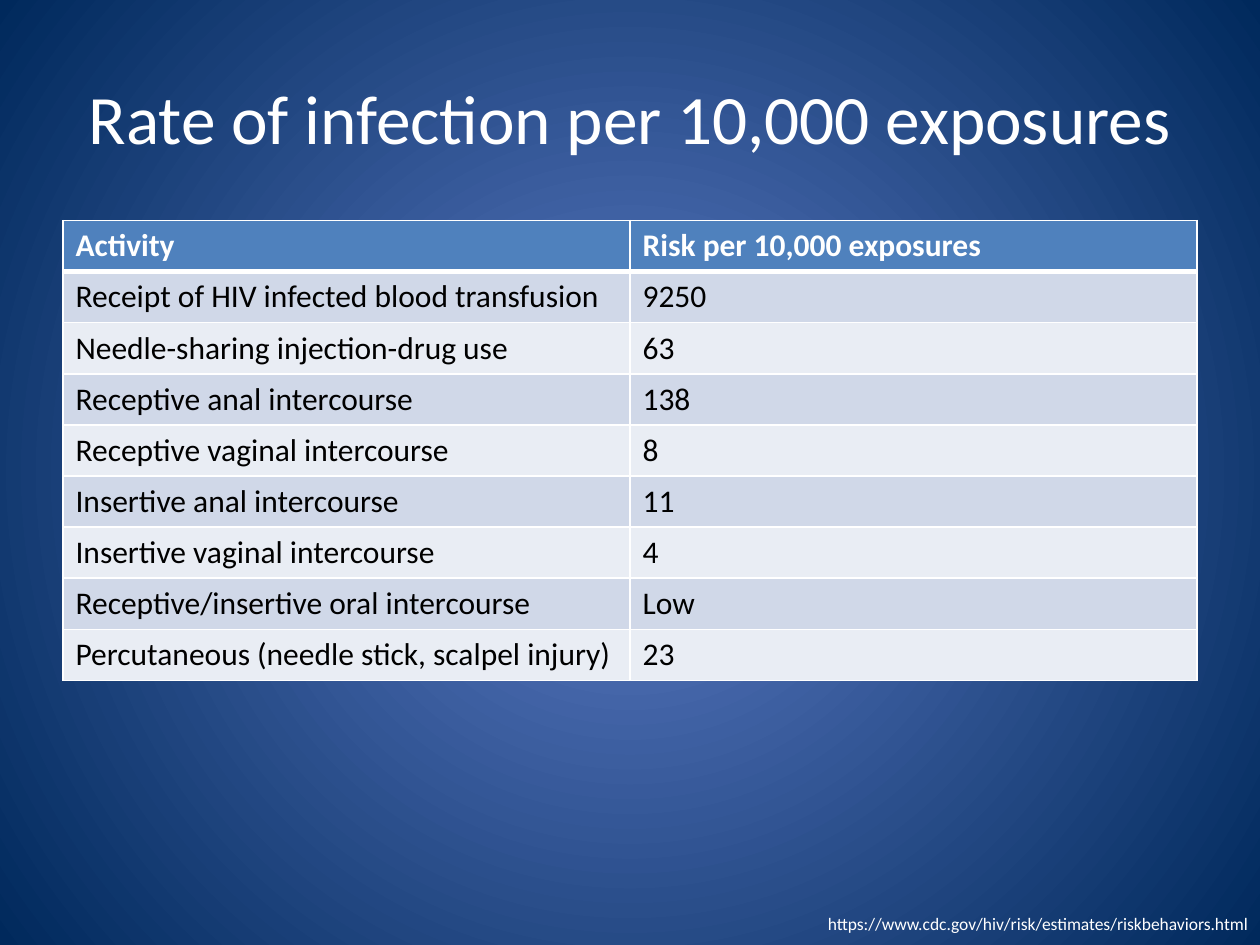
from typing import NamedTuple

import pptx
import pptx.dml.color
import pptx.enum.text
import pptx.oxml
import pptx.oxml.ns
import pptx.util
from lxml import etree

RGBColor = pptx.dml.color.RGBColor
Align = pptx.enum.text.PP_ALIGN
Anchor = pptx.enum.text.MSO_ANCHOR
qn = pptx.oxml.ns.qn

WHITE = RGBColor(0xFF, 0xFF, 0xFF)
BLACK = RGBColor(0x00, 0x00, 0x00)
GLOW = RGBColor(0x5E, 0x7C, 0xC5)
NAVY = RGBColor(0x00, 0x29, 0x5C)
HEADER = RGBColor(0x4F, 0x81, 0xBD)
BANDS = (RGBColor(0xD0, 0xD8, 0xE8), RGBColor(0xE9, 0xED, 0xF4))

WIDTH = pptx.util.Inches(10)
HEIGHT = pptx.util.Inches(7.5)
ROW_HEIGHT = pptx.util.Inches(3.65 / 9)
THIN, THICK = 1, 3


class Box(NamedTuple):
    left: float
    top: float
    width: float
    height: float

    def lengths(self) -> tuple:
        return (int(self.left * WIDTH), int(self.top * HEIGHT),
                int(self.width * WIDTH), int(self.height * HEIGHT))


class Risk(NamedTuple):
    activity: str
    rate: str


HEADINGS = Risk("Activity", "Risk per 10,000 exposures")
RISKS = (
    Risk("Receipt of HIV infected blood transfusion", "9250"),
    Risk("Needle-sharing injection-drug use", "63"),
    Risk("Receptive anal intercourse", "138"),
    Risk("Receptive vaginal intercourse", "8"),
    Risk("Insertive anal intercourse", "11"),
    Risk("Insertive vaginal intercourse", "4"),
    Risk("Receptive/insertive oral intercourse", "Low"),
    Risk("Percutaneous (needle stick, scalpel injury)", "23"),
)
TITLE_BOX = Box(0.05, 0.04, 0.9, 1 / 6)
TABLE_BOX = Box(0.05, 1.75 / 7.5, 0.9, 3.65 / 7.5)
SOURCE_BOX = Box(0.433, 0.96, 0.567, 0.036)


def write(tf, text: str, *, size: float, color=WHITE, bold=False, align=Align.LEFT) -> None:
    p = tf.paragraphs[0]
    p.alignment = align
    r = p.add_run()
    r.text = text
    r.font.name = "Calibri"
    r.font.size = pptx.util.Pt(size)
    r.font.bold = bold
    r.font.color.rgb = color


def add_text(s, box: Box, text: str, *, anchor=Anchor.TOP, **style) -> None:
    tf = s.shapes.add_textbox(*box.lengths()).text_frame
    tf.word_wrap = True
    tf.vertical_anchor = anchor
    write(tf, text, **style)


def paint_background(s) -> None:
    fill = s.background.fill
    fill.gradient()
    for stop, color, position in zip(fill.gradient_stops, (GLOW, NAVY), (0, 1)):
        stop.color.rgb = color
        stop.position = position
    lin = s.element.find(".//" + qn("a:lin"))
    circle = etree.Element(qn("a:path"), {"path": "circle"})
    etree.SubElement(circle, qn("a:fillToRect"), dict.fromkeys("ltrb", "50000"))
    lin.getparent().replace(lin, circle)


def set_borders(cell, **widths: float) -> None:
    tc_pr = cell._tc.get_or_add_tcPr()
    for side in "LRTB":
        width = pptx.util.Pt(widths.get(side, THIN))
        ln = etree.SubElement(tc_pr, qn(f"a:ln{side}"), {"w": str(width)})
        solid = etree.SubElement(ln, qn("a:solidFill"))
        etree.SubElement(solid, qn("a:srgbClr"), {"val": str(WHITE)})


def add_risk_table(s, box: Box) -> None:
    rows = (HEADINGS, *RISKS)
    table = s.shapes.add_table(len(rows), len(HEADINGS), *box.lengths()).table
    for i, risk in enumerate(rows):
        is_header = i == 0
        table.rows[i].height = ROW_HEIGHT
        for j, text in enumerate(risk):
            cell = table.cell(i, j)
            set_borders(cell, B=THICK if is_header else THIN, T=THICK if i == 1 else THIN)
            cell.fill.solid()
            cell.fill.fore_color.rgb = HEADER if is_header else BANDS[(i - 1) % 2]
            write(cell.text_frame, text, size=18, bold=is_header,
                  color=WHITE if is_header else BLACK)


def main() -> None:
    prs = pptx.Presentation()
    prs.slide_width, prs.slide_height = WIDTH, HEIGHT
    s = prs.slides.add_slide(prs.slide_layouts[6])
    paint_background(s)
    add_text(s, TITLE_BOX, "Rate of infection per 10,000 exposures",
             size=39.6, align=Align.CENTER, anchor=Anchor.MIDDLE)
    add_risk_table(s, TABLE_BOX)
    add_text(s, SOURCE_BOX, "https://www.cdc.gov/hiv/risk/estimates/riskbehaviors.html",
             size=10, align=Align.RIGHT)
    prs.save("out.pptx")


if __name__ == "__main__":
    main()
